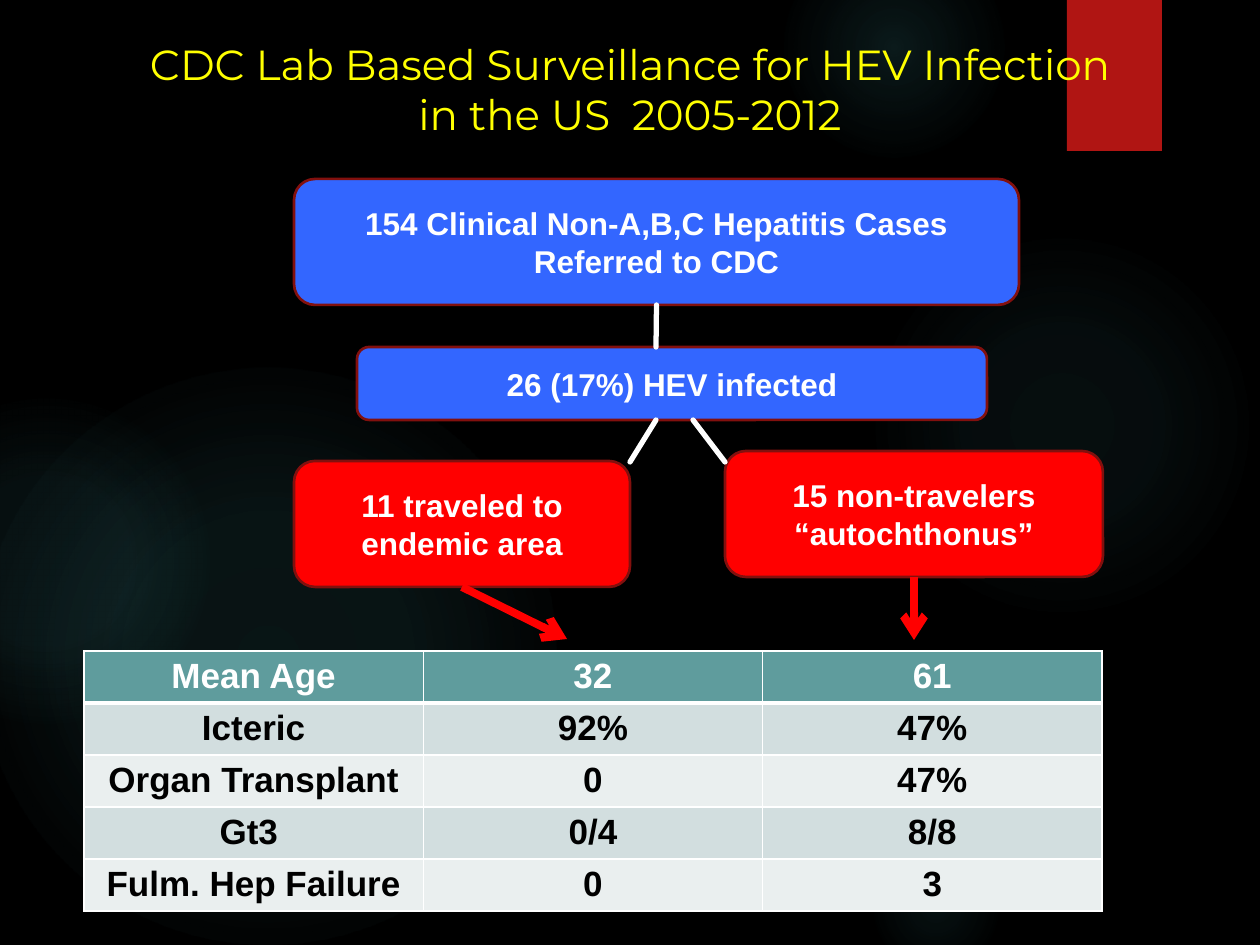
from lxml import etree
from pptx import Presentation
from pptx.dml.color import RGBColor
from pptx.enum.shapes import MSO_CONNECTOR, MSO_SHAPE
from pptx.enum.text import MSO_ANCHOR, MSO_AUTO_SIZE, PP_ALIGN
from pptx.oxml.ns import qn
from pptx.util import Pt

STRAIGHT = MSO_CONNECTOR.STRAIGHT
OVAL, RECT, ROUNDED = MSO_SHAPE.OVAL, MSO_SHAPE.RECTANGLE, MSO_SHAPE.ROUNDED_RECTANGLE
TOP, MIDDLE = MSO_ANCHOR.TOP, MSO_ANCHOR.MIDDLE
CENTER = PP_ALIGN.CENTER
FIXED = MSO_AUTO_SIZE.NONE

BLACK = RGBColor(0x00, 0x00, 0x00)
WHITE = RGBColor(0xFF, 0xFF, 0xFF)
YELLOW = RGBColor(0xFF, 0xFF, 0x00)
RED = RGBColor(0xFF, 0x00, 0x00)
BLUE = RGBColor(0x33, 0x66, 0xFF)
MAROON = RGBColor(0x82, 0x10, 0x0E)
RIBBON_RED = RGBColor(0xB0, 0x15, 0x13)
GLOW_TEAL = RGBColor(0x50, 0xB9, 0xC1)
HEADER_TEAL = RGBColor(0x5F, 0x9C, 0x9D)
BAND_DARK = RGBColor(0xD2, 0xDE, 0xDF)
BAND_LIGHT = RGBColor(0xEA, 0xEF, 0xEF)

PX = 914400 / 126  # EMU per pixel

TITLE_FONT = {"name": "Montserrat", "size": Pt(24), "bold": False}
BOX_FONT = {"name": "Arial", "size": Pt(18), "bold": True}
TABLE_FONT = {"name": "Arial", "size": Pt(20), "bold": True}


def emu(*lengths):
    return [round(length * PX) for length in lengths]


def write(frame, text, font, color):
    """Put centred text in a frame with the given font values."""
    frame.text = text
    paragraph = frame.paragraphs[0]
    paragraph.alignment = CENTER
    run_font = paragraph.runs[0].font
    for attribute, value in font.items():
        setattr(run_font, attribute, value)
    run_font.color.rgb = color


deck = Presentation()
deck.slide_width, deck.slide_height = emu(1260, 945)
slide = deck.slides.add_slide(deck.slide_layouts[5])
slide.background.fill.solid()
slide.background.fill.fore_color.rgb = BLACK
shapes = slide.shapes

# Background glows: left, top, diameter, then (position %, opacity %) stops
glows = [
    (868, 231, 388, [(0, 7), (36, 6), (69, 0)]),
    (784, -63, 220, [(0, 14), (36, 7), (73, 0)]),
    (868, 840, 136, [(0, 9), (36, 5), (66, 0)]),
    (-21, 368, 577, [(0, 11), (36, 10), (75, 0)]),
    (-116, 399, 325, [(0, 8), (36, 8), (72, 0)]),
]
for left, top, diameter, stops in glows:
    glow = shapes.add_shape(OVAL, *emu(left, top, diameter, diameter))
    glow.shadow.inherit = False
    glow.line.fill.background()
    gradient = etree.Element(qn("a:gradFill"), rotWithShape="1")
    stop_list = etree.SubElement(gradient, qn("a:gsLst"))
    for position, opacity in stops:
        stop = etree.SubElement(stop_list, qn("a:gs"), pos=str(position * 1000))
        color = etree.SubElement(stop, qn("a:srgbClr"), val=str(GLOW_TEAL))
        etree.SubElement(color, qn("a:alpha"), val=str(opacity * 1000))
    radial = etree.SubElement(gradient, qn("a:path"), path="circle")
    etree.SubElement(radial, qn("a:fillToRect"), l="50000", t="50000", r="50000", b="50000")
    glow._element.spPr.find(qn("a:prstGeom")).addnext(gradient)

ribbon = shapes.add_shape(RECT, *emu(1067, 0, 95, 151))
ribbon.shadow.inherit = False
ribbon.fill.solid()
ribbon.fill.fore_color.rgb = RIBBON_RED
ribbon.line.fill.background()

# Title, brought in front of the background
title = shapes.title
title.left, title.top, title.width, title.height = emu(126, 32, 1008, 115)
write(title.text_frame, "CDC Lab Based Surveillance for HEV Infection in the US  2005-2012",
      TITLE_FONT, YELLOW)
for attribute, value in {"word_wrap": True, "auto_size": FIXED, "vertical_anchor": TOP}.items():
    setattr(title.text_frame, attribute, value)
shapes._spTree.append(title._element)

# Flow chart boxes
cases = [
    ("154 Clinical Non-A,B,C Hepatitis Cases Referred to CDC", BLUE, 294, 179, 725, 126),
    ("26 (17%) HEV infected", BLUE, 357, 347, 630, 73),
    ("11 traveled to endemic area", RED, 294, 461, 336, 126),
    ("15 non-travelers “autochthonus”", RED, 725, 451, 378, 126),
]
boxes = []
for text, color, *place in cases:
    box = shapes.add_shape(ROUNDED, *emu(*place))
    box.shadow.inherit = False
    box.fill.solid()
    box.fill.fore_color.rgb = color
    box.line.color.rgb = MAROON
    box.line.width = Pt(1.5)
    box.text_frame.word_wrap = True
    box.text_frame.vertical_anchor = MIDDLE
    write(box.text_frame, text, BOX_FONT, WHITE)
    boxes.append(box)
referred, infected, travelers, non_travelers = boxes

# Outcome table
outcomes = [
    ("Mean Age", "32", "61"),
    ("Icteric", "92%", "47%"),
    ("Organ Transplant", "0", "47%"),
    ("Gt3 ", "0/4", "8/8"),
    ("Fulm. Hep Failure", "0", "3"),
]
table = shapes.add_table(5, 3, *emu(84, 651, 1018, 260)).table
for column in table.columns:
    column.width = round(1018 * PX / 3)
for r, values in enumerate(outcomes):
    table.rows[r].height = emu(52)[0]
    band = HEADER_TEAL if r == 0 else BAND_DARK if r % 2 else BAND_LIGHT
    for c, value in enumerate(values):
        cell = table.cell(r, c)
        write(cell.text_frame, value, TABLE_FONT, BLACK if r else WHITE)
        properties = cell._tc.get_or_add_tcPr()
        for side in ("lnL", "lnR", "lnT", "lnB"):
            width = Pt(3) if r == 0 and side == "lnB" else Pt(1)
            border = etree.SubElement(properties, qn(f"a:{side}"), w=str(width))
            border_fill = etree.SubElement(border, qn("a:solidFill"))
            etree.SubElement(border_fill, qn("a:srgbClr"), val=str(WHITE))
        cell.fill.solid()
        cell.fill.fore_color.rgb = band

# Connectors: start, end, colour, width, box whose bottom centre is the start
links = [
    ((914, 577), (914, 640), RED, 4.5, non_travelers),
    ((462, 587), (567, 639), RED, 4.5, travelers),
    ((656, 305), (656, 347), WHITE, 3, referred),
    ((656, 420), (630, 462), WHITE, 3, None),
    ((693, 420), (725, 462), WHITE, 3, None),
]
for start, end, color, width, source in links:
    link = shapes.add_connector(STRAIGHT, *emu(*start, *end))
    if source:
        link.begin_connect(source, 2)
    link.line.color.rgb = color
    link.line.width = Pt(width)
    outline = link.line._get_or_add_ln()
    if color == RED:
        etree.SubElement(outline, qn("a:tailEnd"), type="arrow")
    else:
        outline.set("cap", "rnd")
    etree.SubElement(link._element.spPr, qn("a:effectLst"))

deck.save("out.pptx")
